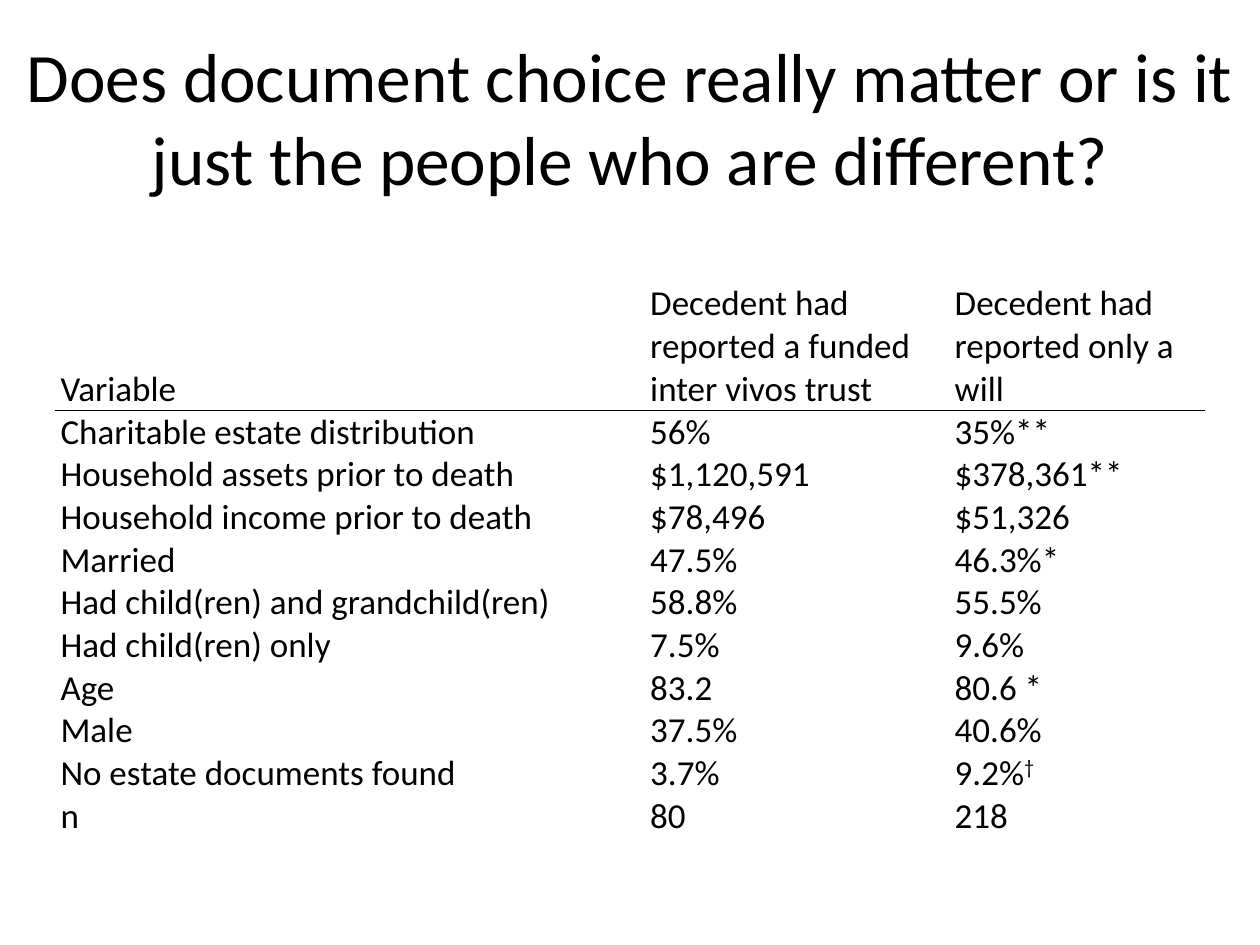
from lxml.etree import SubElement
from pptx import Presentation
from pptx.dml.color import RGBColor
from pptx.enum.text import MSO_ANCHOR, PP_ALIGN
from pptx.oxml import parse_xml
from pptx.oxml.ns import nsdecls, qn
from pptx.util import Pt

COLORS = {"text": "000000", "rule": "000000", "background": "FFFFFF"}
FONT = "Calibri"
TITLE = "Does document choice really matter or is it just the people who are different?"
DAGGER = "†"
LINE_HEIGHT = 24.4
COLUMN_WIDTHS = (337, 174, 136, 9.4)
HEADER = ("Variable", "Decedent had reported a funded inter vivos trust",
          "Decedent had reported only a will")
UNMERGED_VARIABLE = "Household income prior to death"
VARIABLES = [
    ("Charitable estate distribution", "56%", "35%**"),
    ("Household assets prior to death", "$1,120,591", "$378,361**"),
    (UNMERGED_VARIABLE, "$78,496", "$51,326"),
    ("Married", "47.5%", "46.3%*"),
    ("Had child(ren) and grandchild(ren)", "58.8%", "55.5%"),
    ("Had child(ren) only", "7.5%", "9.6%"),
    ("Age", "83.2", "80.6 *"),
    ("Male", "37.5%", "40.6%"),
    ("No estate documents found", "3.7%", "9.2%†"),
    ("n", "80", "218"),
]


def set_font(paragraph, size):
    paragraph.font.name = FONT
    paragraph.font.size = Pt(size)
    paragraph.font.color.rgb = RGBColor.from_string(COLORS["text"])


def add_title(slide, left, top, width, height):
    title = slide.shapes.add_textbox(Pt(left), Pt(top), Pt(width), Pt(height))
    frame = title.text_frame
    frame.word_wrap = True
    frame.vertical_anchor = MSO_ANCHOR.MIDDLE
    paragraph = frame.paragraphs[0]
    paragraph.text = TITLE
    paragraph.alignment = PP_ALIGN.CENTER
    set_font(paragraph, 39.6)


def add_rule(cell, side):
    """Draw a 1 pt border on one side ("T" or "B") of the cell."""
    border = parse_xml(f'<a:ln{side} {nsdecls("a")} w="{Pt(1)}"/>')
    fill = SubElement(border, qn("a:solidFill"))
    SubElement(fill, qn("a:srgbClr"), val=COLORS["rule"])
    cell._tc.get_or_add_tcPr().insert(0, border)


def fill_cell(cell, text, anchor):
    cell.fill.background()
    cell.margin_left = cell.margin_right = Pt(3)
    cell.margin_top = cell.margin_bottom = 0
    cell.vertical_anchor = anchor
    paragraph = cell.text_frame.paragraphs[0]
    set_font(paragraph, 20)
    if text:
        paragraph.add_run().text = text.removesuffix(DAGGER)
    if text.endswith(DAGGER):
        mark = paragraph.add_run()
        mark.text = DAGGER
        mark.font._element.set("baseline", "30000")


def add_comparison_table(slide, left, top):
    rows = [HEADER, *VARIABLES]
    heights = [3 * LINE_HEIGHT] + [LINE_HEIGHT] * len(VARIABLES)
    table = slide.shapes.add_table(
        len(rows), len(COLUMN_WIDTHS), Pt(left), Pt(top),
        Pt(sum(COLUMN_WIDTHS)), Pt(sum(heights))).table
    table.first_row = table.horz_banding = False
    for column, width in zip(table.columns, COLUMN_WIDTHS):
        column.width = Pt(width)
    for r, (values, height) in enumerate(zip(rows, heights)):
        table.rows[r].height = Pt(height)
        anchor = MSO_ANCHOR.BOTTOM if r == 0 else MSO_ANCHOR.TOP
        for c, text in enumerate((*values, "")):
            cell = table.cell(r, c)
            fill_cell(cell, text, anchor)
            if r < 2:
                add_rule(cell, "BT"[r])
        if values[0] != UNMERGED_VARIABLE:
            table.cell(r, 2).merge(table.cell(r, 3))


def main():
    presentation = Presentation()
    presentation.slide_width, presentation.slide_height = Pt(720), Pt(540)
    slide = presentation.slides.add_slide(presentation.slide_layouts[6])
    slide.background.fill.solid()
    slide.background.fill.fore_color.rgb = RGBColor.from_string(COLORS["background"])
    add_title(slide, 0, 21.6, 720, 90)
    add_comparison_table(slide, 31.6, 161.5)
    presentation.save("out.pptx")


if __name__ == "__main__":
    main()
